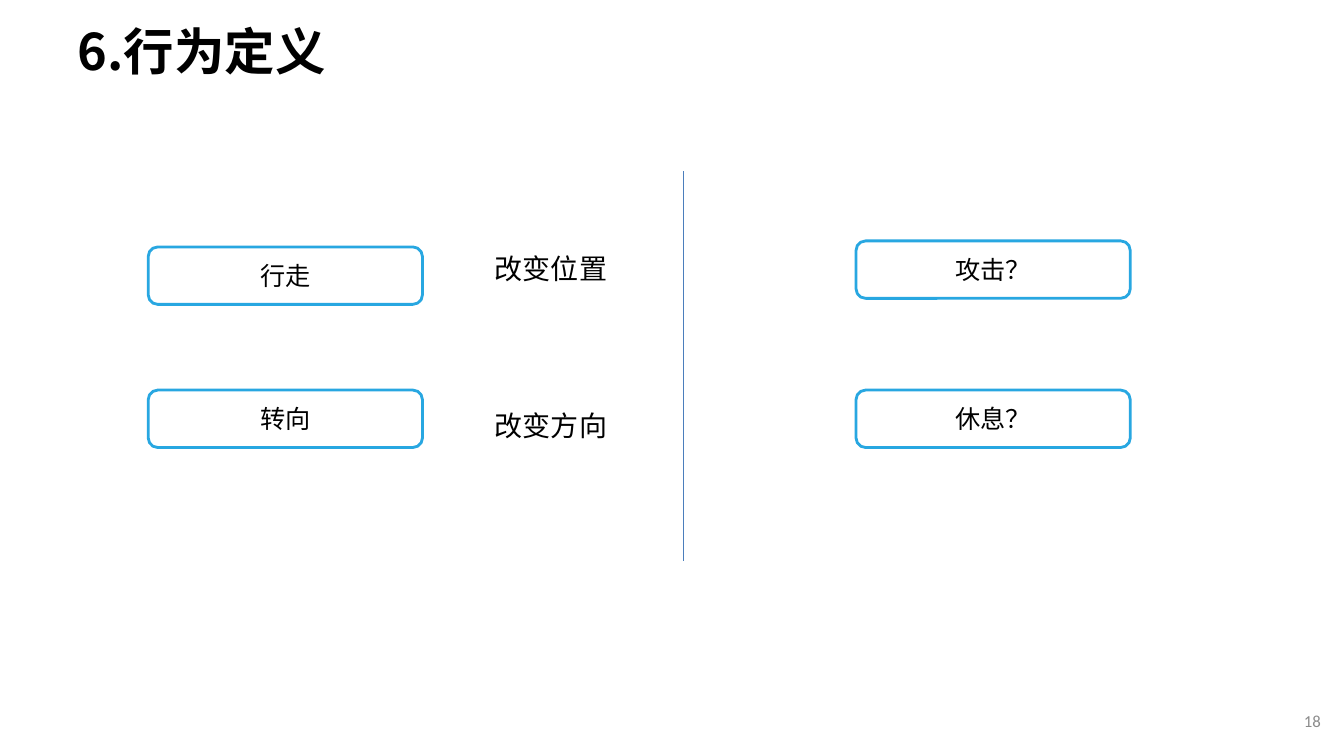
from dataclasses import dataclass

from lxml.etree import SubElement
from pptx import Presentation
from pptx.dml.color import RGBColor
from pptx.enum.shapes import MSO_CONNECTOR, MSO_SHAPE
from pptx.enum.text import MSO_ANCHOR as ANCHOR, MSO_AUTO_SIZE as AUTO, PP_ALIGN as ALIGN
from pptx.oxml.ns import qn
from pptx.util import Inches, Pt


@dataclass(frozen=True)
class Theme:
    """Colours, fonts and type sizes of the slide."""
    ink: str = "000000"
    outline: str = "28A7E1"
    divider: str = "4B7EBC"
    muted: str = "8C8C8C"
    cjk: str = "Noto Sans CJK SC"
    latin: str = "Calibri"
    title: int = 36
    note: int = 20
    label: int = 18
    number: int = 12


THEME = Theme()


def box(left, top, width, height):
    """Return a position and size in inches."""
    return [Inches(v) for v in (left, top, width, height)]


def write(shape, text, size, font=THEME.cjk, color=THEME.ink, bold=False,
          align=ALIGN.LEFT, anchor=ANCHOR.MIDDLE, wrap=True):
    """Put one formatted run into a shape."""
    tf = shape.text_frame
    tf.word_wrap = wrap
    tf.vertical_anchor = anchor
    p = tf.paragraphs[0]
    p.alignment = align
    r = p.add_run()
    r.text = text
    r.font.name = font
    r.font.size = Pt(size)
    r.font.bold = bold
    r.font.color.rgb = RGBColor.from_string(color)
    SubElement(r.font._element, qn("a:ea")).set("typeface", font)


def add_title(s, text):
    """Move and fill the title placeholder."""
    sp = s.shapes.title
    sp.left, sp.top, sp.width, sp.height = box(0.67, 0.18, 7.82, 0.64)
    write(sp, text, THEME.title, bold=True)
    sp.text_frame.auto_size = AUTO.NONE


def add_behavior(s, text, left, top):
    """Add an outlined rounded box naming a behavior."""
    sp = s.shapes.add_shape(MSO_SHAPE.ROUNDED_RECTANGLE, *box(left, top, 2.72, 0.57))
    sp.shadow.inherit = False
    sp.fill.background()
    sp.line.color.rgb = RGBColor.from_string(THEME.outline)
    sp.line.width = Pt(2)
    write(sp, text, THEME.label, align=ALIGN.CENTER)


def add_effect(s, text, top):
    """Add the note on what a behavior changes."""
    sp = s.shapes.add_textbox(*box(4.81, top, 1.32, 0.44))
    write(sp, text, THEME.note, anchor=ANCHOR.TOP, wrap=False)
    sp.text_frame.auto_size = AUTO.SHAPE_TO_FIT_TEXT


def add_divider(s, x, top, bottom):
    """Add the vertical line between the two halves."""
    line = s.shapes.add_connector(
        MSO_CONNECTOR.STRAIGHT, Inches(x), Inches(top), Inches(x), Inches(bottom))
    line.line.color.rgb = RGBColor.from_string(THEME.divider)
    line.line.width = Pt(0.75)
    SubElement(line._element.spPr, qn("a:effectLst"))


def add_page_number(s, text):
    """Add the page number at the bottom right."""
    sp = s.shapes.add_textbox(*box(10.09, 6.95, 3.11, 0.4))
    write(sp, text, THEME.number, THEME.latin, THEME.muted, align=ALIGN.RIGHT)


def main():
    """Build and save the slide."""
    prs = Presentation()
    prs.slide_width, prs.slide_height = Inches(13.33), Inches(7.5)
    s = prs.slides.add_slide(prs.slide_layouts[5])
    add_title(s, "6.行为定义")
    add_page_number(s, "18")
    known, open_ideas = 1.47, 8.49
    for text, left, top in (("行走", known, 2.45), ("转向", known, 3.87),
                            ("攻击？", open_ideas, 2.39), ("休息？", open_ideas, 3.87)):
        add_behavior(s, text, left, top)
    for text, top in (("改变位置", 2.45), ("改变方向", 4)):
        add_effect(s, text, top)
    add_divider(s, 6.78, 1.7, 5.57)
    prs.save("out.pptx")


if __name__ == "__main__":
    main()
